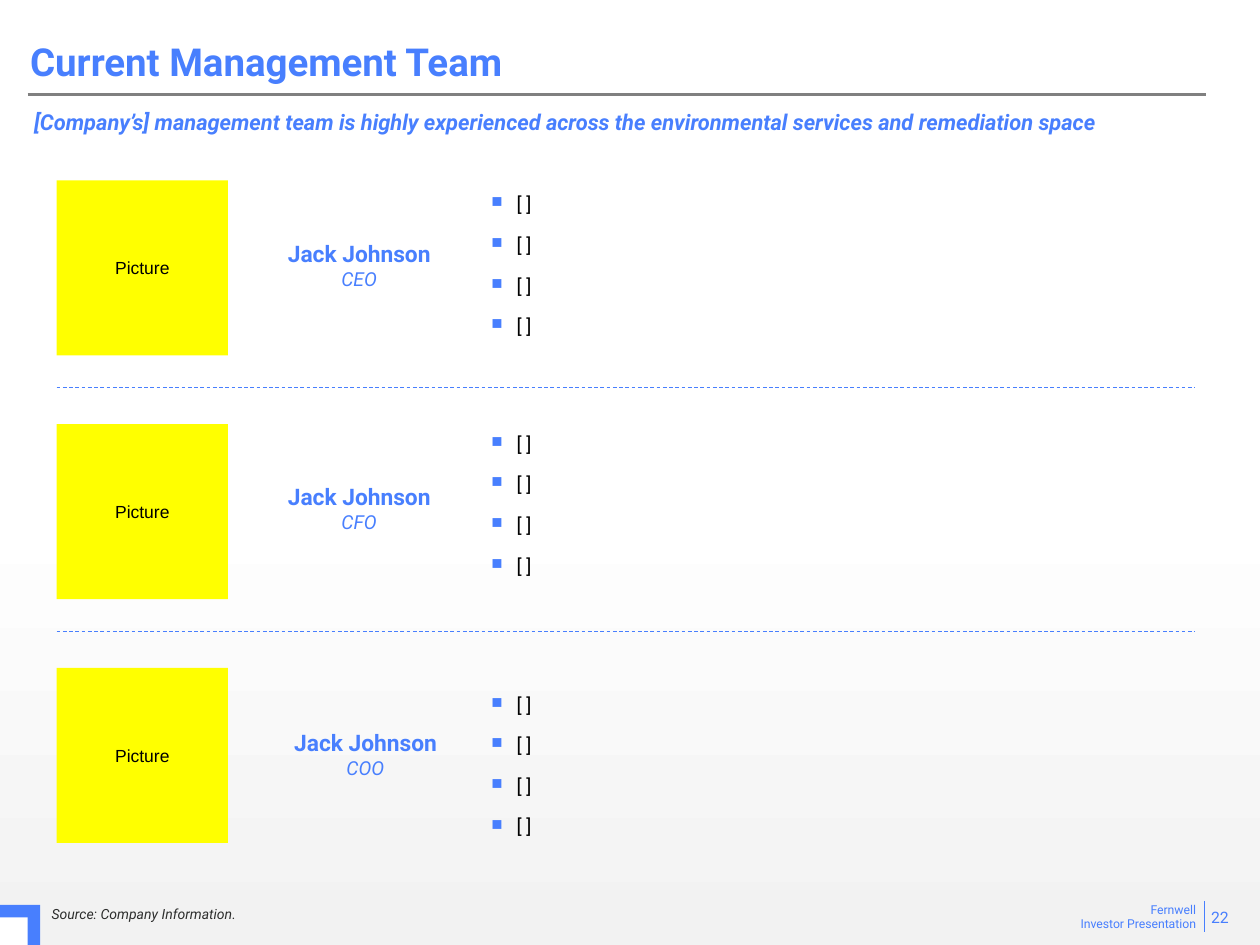
import copy
from dataclasses import dataclass
from typing import Any, Optional

import pptx
import pptx.dml.color
import pptx.enum.dml
import pptx.enum.shapes
import pptx.enum.text
import pptx.oxml
import pptx.oxml.ns
import pptx.util

Pt = pptx.util.Pt
Align = pptx.enum.text.PP_ALIGN
Anchor = pptx.enum.text.MSO_ANCHOR


@dataclass(frozen=True)
class Theme:
    accent: str = "487FFE"
    white: str = "FFFFFF"
    shade: str = "F2F2F2"
    rule: str = "808080"
    portrait: str = "FFFF00"
    ink: str = "000000"
    source: str = "2D2E2D"
    font: str = "Roboto"
    portrait_font: str = "Arial"
    title_size: float = 22
    name_size: float = 13
    subtitle_size: float = 12.5
    body_size: float = 11
    portrait_size: float = 10
    page_size: float = 9
    source_size: float = 8
    footer_size: float = 7


@dataclass(frozen=True)
class Box:
    left: float
    top: float
    width: float
    height: float

    def lengths(self) -> list[pptx.util.Length]:
        return [Pt(v) for v in (self.left, self.top, self.width, self.height)]


@dataclass(frozen=True)
class Line:
    text: str
    size: float
    color: str
    bold: bool = False
    italic: bool = False
    font: str = Theme.font


@dataclass(frozen=True)
class Member:
    name: str
    role: str
    name_box: Box
    list_top: float
    points: tuple[str, ...] = ("[ ]",) * 4


THEME = Theme()
ROW_LEFT, ROW_RIGHT = 32.4, 682.6
FIRST_ROW, ROW_PITCH, DIVIDER_DROP = 103, 139.3, 118.6
MEMBERS = (
    Member("Jack Johnson", "CEO", Box(142.6, 128.9, 125.3, 45.4), 109.4),
    Member("Jack Johnson", "CFO", Box(139, 267.8, 132.5, 45.4), 246.2),
    Member("Jack Johnson", "COO", Box(142.6, 408.2, 132.5, 45.4), 395.3),
)


def rgb(color: str) -> pptx.dml.color.RGBColor:
    return pptx.dml.color.RGBColor.from_string(color)


def write_lines(frame: Any, lines: list[Line], align: Align) -> None:
    for index, line in enumerate(lines):
        paragraph = frame.paragraphs[0] if index == 0 else frame.add_paragraph()
        paragraph.alignment = align
        run = paragraph.add_run()
        run.text = line.text
        run.font.name = line.font
        run.font.size = Pt(line.size)
        run.font.bold = line.bold
        run.font.italic = line.italic
        run.font.color.rgb = rgb(line.color)


def add_text(shapes: Any, box: Box, lines: list[Line], align: Align = Align.LEFT,
             anchor: Anchor = Anchor.TOP,
             insets: tuple[float, ...] = (7.2, 3.6, 7.2, 3.6)) -> Any:
    frame = shapes.add_textbox(*box.lengths()).text_frame
    frame.word_wrap = True
    frame.vertical_anchor = anchor
    (frame.margin_left, frame.margin_top,
     frame.margin_right, frame.margin_bottom) = map(Pt, insets)
    write_lines(frame, lines, align)
    return frame


def add_block(shapes: Any, box: Box, color: str) -> Any:
    block = shapes.add_shape(pptx.enum.shapes.MSO_SHAPE.RECTANGLE, *box.lengths())
    block.shadow.inherit = False
    block.fill.solid()
    block.fill.fore_color.rgb = rgb(color)
    block.line.fill.background()
    return block


def add_line(shapes: Any, start: tuple[float, float], end: tuple[float, float],
             color: str, width: float, dashed: bool = False) -> None:
    rule = shapes.add_connector(pptx.enum.shapes.MSO_CONNECTOR.STRAIGHT,
                                *map(Pt, start + end))
    rule.line.color.rgb = rgb(color)
    rule.line.width = Pt(width)
    if dashed:
        rule.line.dash_style = pptx.enum.dml.MSO_LINE.DASH
    properties = rule.element.find(pptx.oxml.ns.qn("p:spPr"))
    properties.append(pptx.oxml.parse_xml(
        f'<a:effectLst {pptx.oxml.ns.nsdecls("a")}/>'))


def add_bullet(paragraph: Any) -> None:
    paragraph.space_before = paragraph.space_after = Pt(5)
    properties = paragraph._p.get_or_add_pPr()
    properties.set("marL", str(Pt(15.1)))
    properties.set("indent", str(Pt(-14.4)))
    for tag in (f'buClr><a:srgbClr val="{THEME.accent}"/></a:buClr',
                'buSzPct val="79000"/', 'buChar char="■"/',
                f'tabLst><a:tab pos="{Pt(15.1)}" algn="l"/></a:tabLst'):
        name = tag.split(">")[0]
        opening = f'<a:{name}'.rstrip("/") + f' {pptx.oxml.ns.nsdecls("a")}'
        rest = tag[len(name):]
        properties.append(pptx.oxml.parse_xml(opening + (rest or "/") + ">"))


def paint_background(slide: Any) -> None:
    fill = slide.background.fill
    fill.gradient()
    fill.gradient_angle = 270
    stop_list = next(slide.element.iter(pptx.oxml.ns.qn("a:gsLst")))
    stop_list.insert(1, copy.deepcopy(stop_list[0]))
    colors = (THEME.white, THEME.white, THEME.shade)
    for stop, position, color in zip(fill.gradient_stops, (0, 0.53, 1), colors):
        stop.position = position
        stop.color.rgb = rgb(color)


def add_member(shapes: Any, member: Member, row_top: float) -> None:
    portrait = add_block(shapes, Box(ROW_LEFT, row_top, 97.9, 100.1), THEME.portrait)
    portrait.text_frame.vertical_anchor = Anchor.MIDDLE
    write_lines(portrait.text_frame,
                [Line("Picture", THEME.portrait_size, THEME.ink,
                      font=THEME.portrait_font)], Align.CENTER)
    add_text(shapes, member.name_box,
             [Line(member.name, THEME.name_size, THEME.accent, bold=True),
              Line(member.role, THEME.body_size, THEME.accent, italic=True)],
             Align.CENTER, Anchor.MIDDLE)
    experience = add_text(
        shapes, Box(280.1, member.list_top, 402.5, 85),
        [Line(point, THEME.body_size, THEME.ink) for point in member.points],
        Align.JUSTIFY, insets=(0, 0.7, 0, 0))
    for paragraph in experience.paragraphs:
        add_bullet(paragraph)


def add_frame(shapes: Any) -> None:
    # Footer and corner mark
    add_text(shapes, Box(607, 511.9, 83.5, 24.5),
             [Line(text, THEME.footer_size, THEME.accent)
              for text in ("Fernwell", "Investor Presentation")], Align.RIGHT)
    add_line(shapes, (688.3, 514.8), (688.3, 532.8), THEME.accent, 0.5)
    add_text(shapes, Box(655.2, 515.5, 54, 17.3),
             [Line("22", THEME.page_size, THEME.accent)], Align.RIGHT, Anchor.MIDDLE)
    corner = shapes.add_group_shape().shapes
    add_block(corner, Box(0, 517, 23, 23), THEME.accent)
    add_block(corner, Box(0, 524.2, 15.8, 15.8), THEME.white)
    add_text(shapes, Box(29.5, 517, 528.5, 10.1),
             [Line("Source: Company Information.", THEME.source_size, THEME.source,
                   italic=True)], anchor=Anchor.BOTTOM, insets=(0, 0, 0, 0))

    # Title and subtitle
    add_line(shapes, (15.8, 54), (689, 54), THEME.rule, 1.5)
    title = add_text(shapes, Box(10.1, 18, 567.4, 33.8),
                     [Line("Current Management Team", THEME.title_size, THEME.accent,
                           bold=True)], anchor=Anchor.BOTTOM)
    title.paragraphs[0].line_spacing = 0.9
    subtitle = add_text(
        shapes, Box(17.3, 61.9, 692.6, 35.3),
        [Line("[Company’s] management team is highly experienced across the "
              "environmental services and remediation space",
              THEME.subtitle_size, THEME.accent, bold=True, italic=True)],
        insets=(2.2, 0, 0, 0))
    subtitle.paragraphs[0].space_before = Pt(2.5)


def main() -> None:
    deck = pptx.Presentation()
    deck.slide_width, deck.slide_height = Pt(720), Pt(540)
    slide = deck.slides.add_slide(deck.slide_layouts[6])
    paint_background(slide)
    add_frame(slide.shapes)

    # Team rows, with a divider between neighbours
    for index, member in enumerate(MEMBERS):
        row_top = FIRST_ROW + index * ROW_PITCH
        add_member(slide.shapes, member, row_top)
        if index < len(MEMBERS) - 1:
            divider = row_top + DIVIDER_DROP
            add_line(slide.shapes, (ROW_LEFT, divider), (ROW_RIGHT, divider),
                     THEME.accent, 0.5, dashed=True)
    deck.save("out.pptx")


if __name__ == "__main__":
    main()
